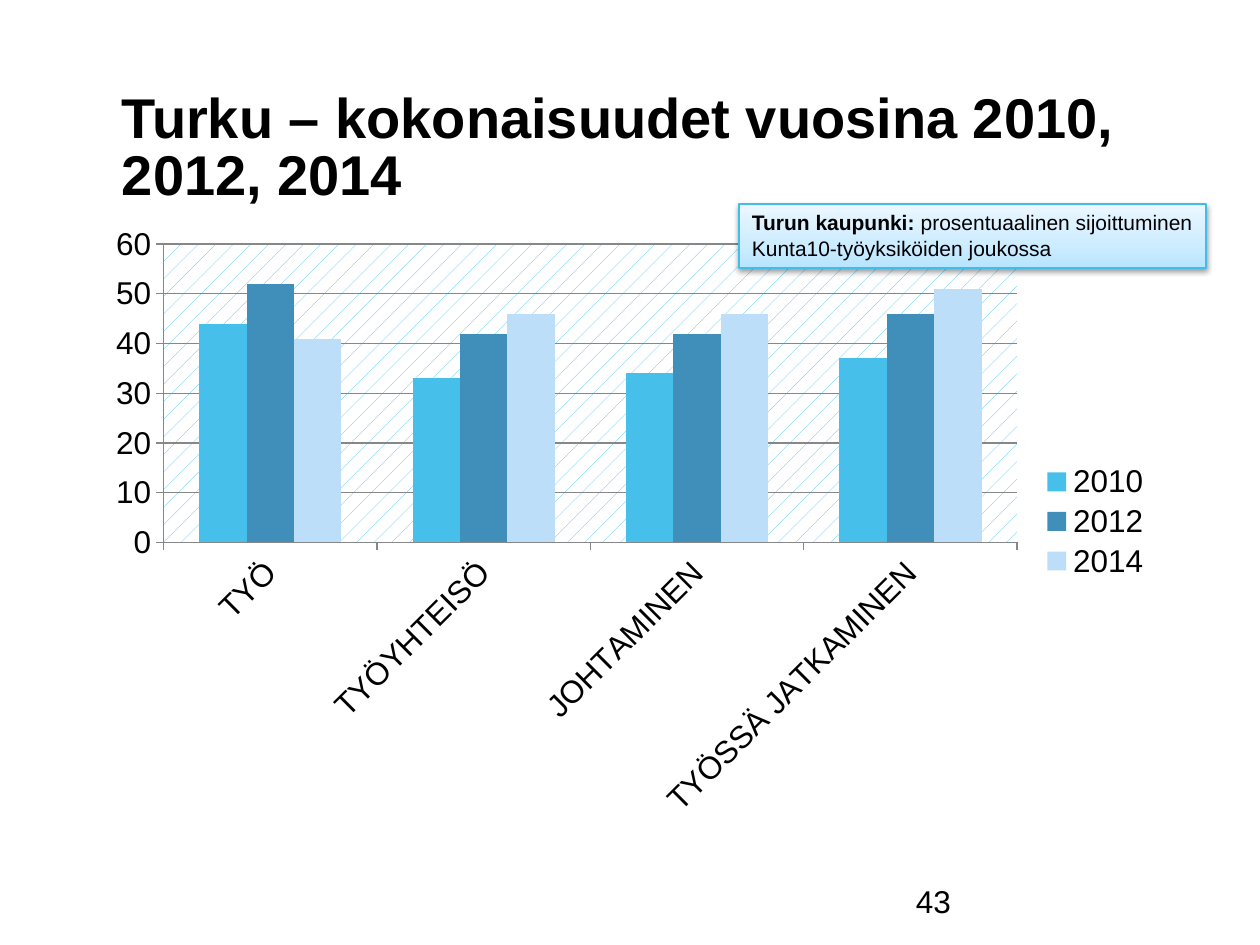
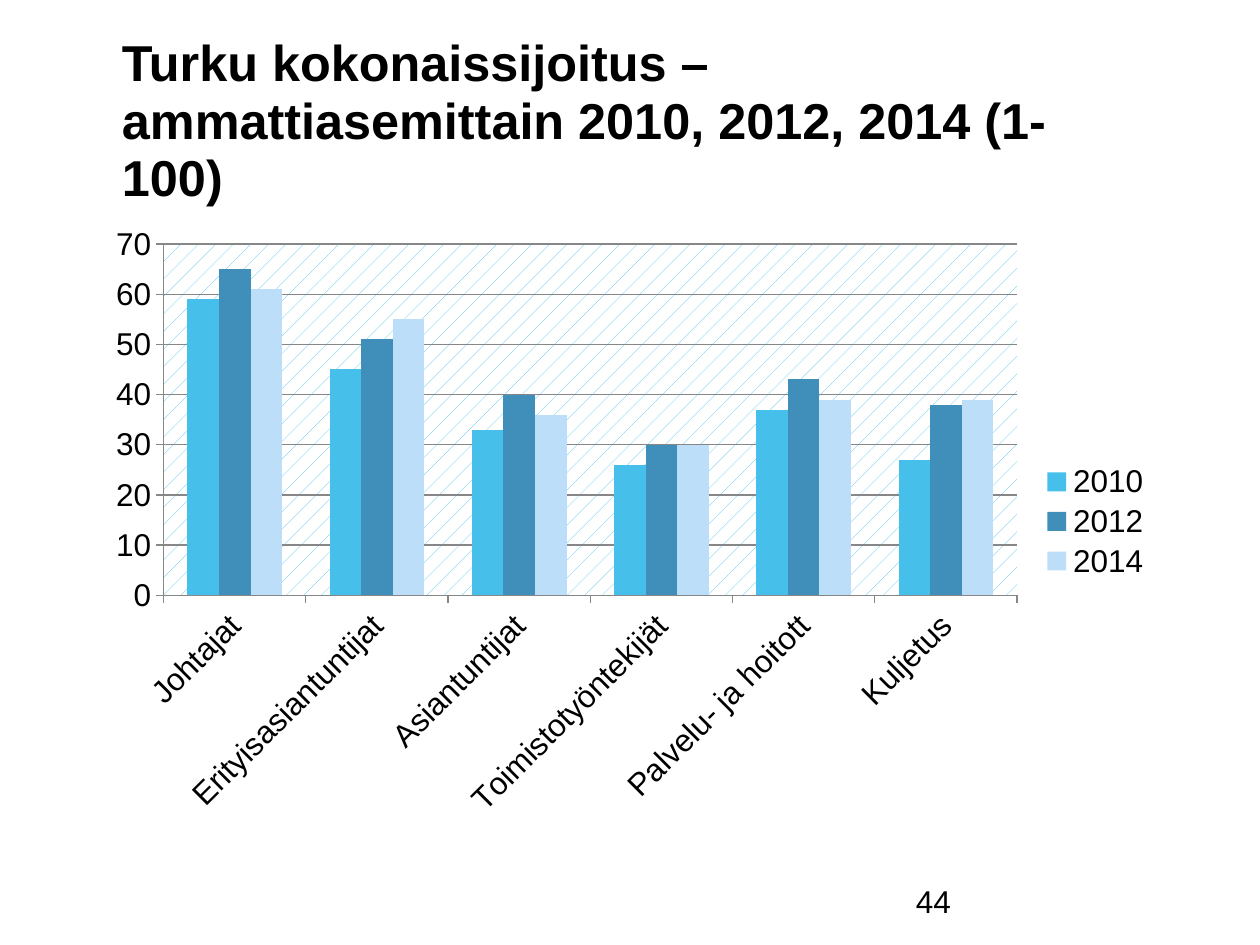
from lxml import etree
from pptx import Presentation
from pptx import util as u
from pptx.chart.data import CategoryChartData
from pptx.dml.color import RGBColor
from pptx.enum import chart as charts, shapes, text
from pptx.oxml import parse_xml
from pptx.oxml.ns import nsdecls, qn

PX = 914400 / 126
FONT = "Arial"
COLORS = {
    "text": "000000", "axis": "878787", "paper": "FFFFFF", "callout line": "40BDE9",
    "2010": "46BFEA", "2012": "408FBB", "2014": "BDDEF8",
}
CALLOUT_STOPS = [(0, "B7E5FF"), (35, "CCECFF"), (100, "ECF7FF")]
CALLOUT = ("Turun kaupunki: ", "prosentuaalinen sijoittuminen Kunta10-työyksiköiden joukossa")

SLIDES = [
    {
        "title": "Turku – kokonaisuudet vuosina 2010, 2012, 2014", "title size": 32,
        "number": "43", "maximum": 60, "plot height": 0.485, "callout": True,
        "categories": ["TYÖ", "TYÖYHTEISÖ", "JOHTAMINEN", "TYÖSSÄ JATKAMINEN"],
        "series": {"2010": [44, 33, 34, 37], "2012": [52, 42, 42, 46], "2014": [41, 46, 46, 51]},
    },
    {
        "title": "Turku kokonaissijoitus – ammattiasemittain 2010, 2012, 2014 (1-100)",
        "title size": 28.8,
        "number": "44", "maximum": 70, "plot height": 0.571, "callout": False,
        "categories": ["Johtajat", "Erityisasiantuntijat", "Asiantuntijat",
                       "Toimistotyöntekijät", "Palvelu- ja hoitott", "Kuljetus"],
        "series": {"2010": [59, 45, 33, 26, 37, 27], "2012": [65, 51, 40, 30, 43, 38],
                   "2014": [61, 55, 36, 30, 39, 39]},
    },
]


def write(shape, words, size, lead="", bold=False, inset=(13, 6),
          anchor=text.MSO_ANCHOR.TOP, spacing=None):
    """Fill a shape with one paragraph, opened by an optional bold lead."""
    frame = shape.text_frame
    frame.word_wrap = True
    frame.vertical_anchor = anchor
    frame.margin_left = frame.margin_right = round(inset[0] * PX)
    frame.margin_top = frame.margin_bottom = round(inset[1] * PX)
    paragraph = frame.paragraphs[0]
    paragraph.alignment = text.PP_ALIGN.LEFT
    if spacing:
        paragraph.line_spacing = u.Pt(spacing)
    for content, heavy in ((lead, True), (words, bold)):
        if content:
            run = paragraph.add_run()
            run.text = content
            run.font.name = FONT
            run.font.size = u.Pt(size)
            run.font.bold = heavy
            run.font.color.rgb = RGBColor.from_string(COLORS["text"])


def place_inside_chart(element, index, target="", **fractions):
    """Give a chart part a manual layout in fractions of the chart."""
    for old in element.findall(qn("c:layout")):
        element.remove(old)
    modes = '<c:xMode val="edge"/><c:yMode val="edge"/>'
    sizes = "".join(f'<c:{key} val="{value}"/>' for key, value in fractions.items())
    element.insert(index, parse_xml(
        f'<c:layout {nsdecls("c")}><c:manualLayout>{target}{modes}{sizes}'
        '</c:manualLayout></c:layout>'))


presentation = Presentation()
presentation.slide_width = u.Inches(10)
presentation.slide_height = u.Inches(7.5)

for content in SLIDES:
    slide = presentation.slides.add_slide(presentation.slide_layouts[6])

    title = slide.shapes.add_textbox(*[round(v * PX) for v in (122, 71, 1022, 136)])
    write(title, content["title"], content["title size"], bold=True, inset=(0, 0),
          anchor=text.MSO_ANCHOR.BOTTOM, spacing=33)

    data = CategoryChartData(number_format="General")
    data.categories = content["categories"]
    for year, values in content["series"].items():
        data.add_series(year, values)
    chart = slide.shapes.add_chart(
        charts.XL_CHART_TYPE.COLUMN_CLUSTERED,
        *[round(v * PX) for v in (94, 214, 1071, 615)], data).chart
    chart.has_title = False
    chart.font.name = FONT
    chart.font.size = u.Pt(18)
    chart.font.color.rgb = RGBColor.from_string(COLORS["text"])

    plot = chart.plots[0]
    plot.gap_width = 150
    plot.overlap = 0
    plot.vary_by_categories = False
    for series in plot.series:
        series.format.fill.solid()
        series.format.fill.fore_color.rgb = RGBColor.from_string(COLORS[series.name])

    value_axis, category_axis = chart.value_axis, chart.category_axis
    value_axis.minimum_scale = 0
    value_axis.maximum_scale = content["maximum"]
    value_axis.major_unit = 10
    value_axis.has_major_gridlines = True
    for axis in (value_axis, category_axis):
        axis.major_tick_mark = charts.XL_TICK_MARK.OUTSIDE
        axis.tick_labels.font.size = u.Pt(18)
    for part in (value_axis, category_axis, value_axis.major_gridlines):
        part.format.line.color.rgb = RGBColor.from_string(COLORS["axis"])
        part.format.line.width = u.Pt(0.75)
    label_body = category_axis._element.find(qn("c:txPr")).find(qn("a:bodyPr"))
    label_body.set("rot", "-2700000")
    label_body.set("vert", "horz")

    chart.has_legend = True
    chart.legend.position = charts.XL_LEGEND_POSITION.RIGHT
    chart.legend.include_in_layout = False
    place_inside_chart(chart.legend._element, 1, x=0.88, y=0.4, w=0.11, h=0.2)

    plot_area = chart._chartSpace.chart.plotArea
    place_inside_chart(plot_area, 0, '<c:layoutTarget val="inner"/>',
                       x=0.065, y=0.049, w=0.797, h=content["plot height"])
    plot_area.append(parse_xml(
        f'<c:spPr {nsdecls("c", "a")}><a:pattFill prst="pct5">'
        f'<a:fgClr><a:srgbClr val="{COLORS["2010"]}"/></a:fgClr>'
        f'<a:bgClr><a:srgbClr val="{COLORS["paper"]}"/></a:bgClr>'
        '</a:pattFill></c:spPr>'))

    number = slide.shapes.add_textbox(*[round(v * PX) for v in (903, 876, 294, 50)])
    write(number, content["number"], 18)

    if content["callout"]:
        callout = slide.shapes.add_shape(
            shapes.MSO_SHAPE.RECTANGLE, *[round(v * PX) for v in (739, 204, 467, 64)])
        callout.line.color.rgb = RGBColor.from_string(COLORS["callout line"])
        callout.line.width = u.Pt(0.75)
        callout.fill.gradient()
        callout.fill.gradient_angle = 90
        stops = callout._element.spPr.find(qn("a:gradFill")).find(qn("a:gsLst"))
        for stop in list(stops):
            stops.remove(stop)
        for percent, color in CALLOUT_STOPS:
            stop = etree.SubElement(stops, qn("a:gs"), pos=str(percent * 1000))
            etree.SubElement(stop, qn("a:srgbClr"), val=color)
        callout.shadow.inherit = False
        callout._element.spPr.find(qn("a:effectLst")).append(parse_xml(
            f'<a:outerShdw {nsdecls("a")} blurRad="40000" dist="20000" dir="5400000" '
            f'rotWithShape="0"><a:srgbClr val="{COLORS["text"]}"><a:alpha val="38000"/>'
            '</a:srgbClr></a:outerShdw>'))
        write(callout, CALLOUT[1], 12, lead=CALLOUT[0])

presentation.save("out.pptx")
